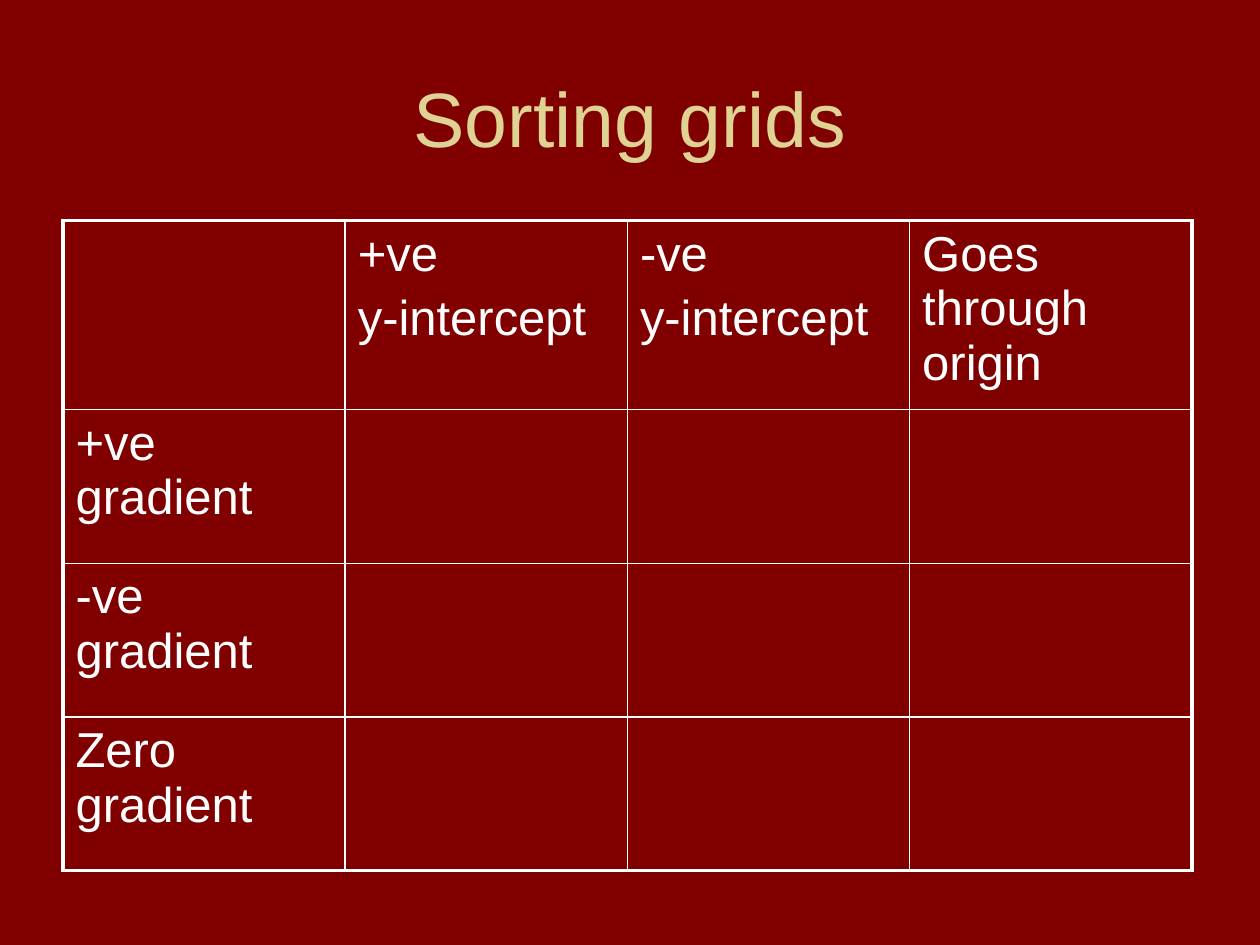
from lxml.etree import SubElement
from pptx import Presentation
from pptx.dml.color import RGBColor
from pptx.enum.text import MSO_ANCHOR, PP_ALIGN
from pptx.oxml.ns import qn
from pptx.util import Inches, Pt


def color(value):
    return RGBColor.from_string(value)


class SlideBuilder:
    font_name = "Arial"
    background_color = "800000"
    title_color = "DFD293"
    text_color = "FFFFFF"
    outer_width = Pt(2.25)
    inner_width = Pt(1)

    def __init__(self, presentation):
        self.slide = presentation.slides.add_slide(presentation.slide_layouts[6])
        fill = self.slide.background.fill
        fill.solid()
        fill.fore_color.rgb = color(self.background_color)

    def set_font(self, paragraph, size, value):
        paragraph.font.name = self.font_name
        paragraph.font.size = Pt(size)
        paragraph.font.color.rgb = color(value)

    def add_title(self, text, left, top, width, height):
        shape = self.slide.shapes.add_textbox(
            Inches(left), Inches(top), Inches(width), Inches(height))
        frame = shape.text_frame
        frame.word_wrap = True
        frame.vertical_anchor = MSO_ANCHOR.MIDDLE
        frame.text = text
        paragraph = frame.paragraphs[0]
        paragraph.alignment = PP_ALIGN.CENTER
        self.set_font(paragraph, 44, self.title_color)

    def add_border(self, cell, side, width):
        properties = cell._tc.get_or_add_tcPr()
        line = SubElement(properties, qn(f"a:ln{side}"), w=str(width))
        fill = SubElement(line, qn("a:solidFill"))
        SubElement(fill, qn("a:srgbClr"), val=self.text_color)

    def add_grid(self, rows, left, top, column_width, row_height):
        row_count, column_count = len(rows), len(rows[0])
        table = self.slide.shapes.add_table(
            row_count, column_count, Inches(left), Inches(top),
            Inches(column_width * column_count),
            Inches(row_height * row_count)).table
        table.first_row = table.horz_banding = False
        for row_index, row in enumerate(rows):
            for column_index, text in enumerate(row):
                cell = table.cell(row_index, column_index)
                outer_sides = {
                    "L": column_index == 0,
                    "R": column_index == column_count - 1,
                    "T": row_index == 0,
                    "B": row_index == row_count - 1,
                }
                for side, is_outer in outer_sides.items():
                    width = self.outer_width if is_outer else self.inner_width
                    self.add_border(cell, side, width)
                cell.fill.background()
                if text:
                    cell.text = text
                    for paragraph in cell.text_frame.paragraphs:
                        paragraph.space_before = Pt(5.6)
                        self.set_font(paragraph, 28, self.text_color)


def main():
    presentation = Presentation()
    presentation.slide_width = Inches(10)
    presentation.slide_height = Inches(7.5)
    builder = SlideBuilder(presentation)
    builder.add_title("Sorting grids", 0.5, 0.3, 9, 1.25)
    headings = ["", "+ve\ny-intercept", "-ve\ny-intercept", "Goes through origin"]
    gradients = ["+ve gradient", "-ve gradient", "Zero gradient"]
    rows = [headings] + [[gradient, "", "", ""] for gradient in gradients]
    builder.add_grid(rows, 0.5, 1.75, 2.24, 1.22)
    presentation.save("out.pptx")


if __name__ == "__main__":
    main()
